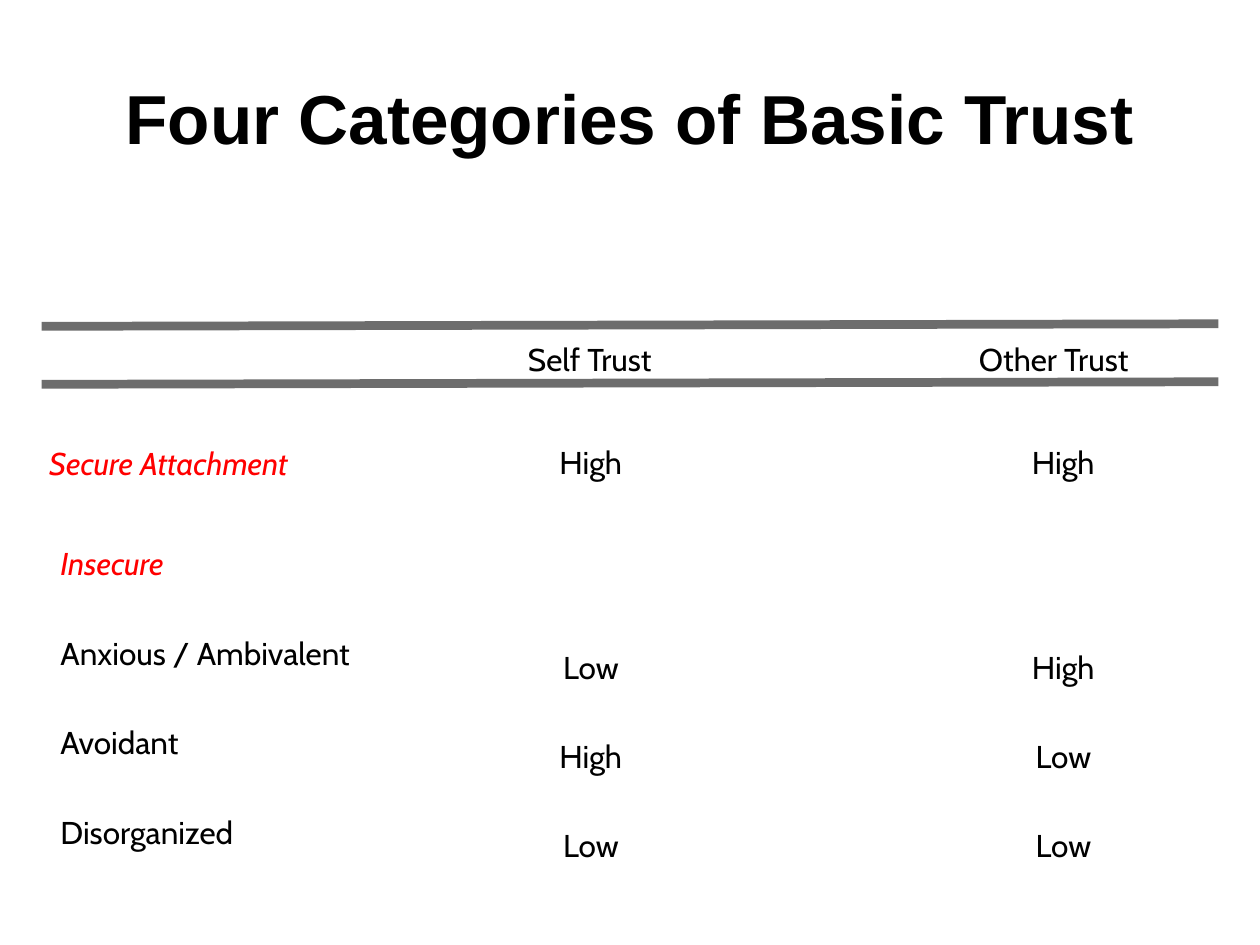
import pptx
import pptx.util
import pptx.dml.color
import pptx.enum.shapes
import pptx.enum.text
import lxml.etree

Inch = pptx.util.Inches
Mid = pptx.enum.text.MSO_ANCHOR.MIDDLE
Align = pptx.enum.text.PP_ALIGN
HUES = {"ink": "000000", "key": "FF0000", "rule": "6D6D6D"}

deck = pptx.Presentation()
deck.slide_width, deck.slide_height = Inch(10), Inch(7.5)
slide = deck.slides.add_slide(deck.slide_layouts[6])


def hue(name):
    return pptx.dml.color.RGBColor.from_string(HUES[name])


def write(words, left, mid, wide, high, wrap=True, ink="ink",
          align=Align.LEFT, **style):
    """Add a text box whose middle height is mid."""
    box = slide.shapes.add_textbox(
        Inch(left), Inch(mid - high / 2), Inch(wide), Inch(high))
    frame = box.text_frame
    form = {"margin_left": 0, "margin_right": 0, "margin_top": 0,
            "margin_bottom": 0, "vertical_anchor": Mid, "word_wrap": wrap}
    for key, value in form.items():
        setattr(frame, key, value)
    para = frame.paragraphs[0]
    para.alignment = align
    run = para.add_run()
    run.text = words
    look = {"name": "Cabin", "size": pptx.util.Pt(18), **style}
    for key, value in look.items():
        setattr(run.font, key, value)
    run.font.color.rgb = hue(ink)


# Title
write("Four Categories of Basic Trust", 0.5, 0.93, 9, 1.25, align=Align.CENTER,
      name="Arial", size=pptx.util.Pt(39.6), bold=True)

# Rules above and below the column heads
for top in (2.59, 3.05):
    rule = slide.shapes.add_connector(
        pptx.enum.shapes.MSO_CONNECTOR.STRAIGHT,
        Inch(0.33), Inch(top), Inch(9.67), Inch(top - 0.02))
    rule.line.color.rgb = hue("rule")
    rule.line.width = pptx.util.Pt(5)
    lxml.etree.SubElement(
        rule._element.spPr, pptx.oxml.ns.qn("a:effectLst"))

# Column heads
for head, left, wide in (("Self Trust", 4.19, 1.07), ("Other Trust", 7.77, 1.26)):
    write(head, left, 2.85, wide, 0.3, wrap=False)

# Row labels
step = 0.71
write("Secure Attachment", 0.39, 3.67, 2.35, 0.41, ink="key", italic=True)
for row, label in enumerate(
        ("Insecure", "Anxious / Ambivalent", "Avoidant", "Disorganized")):
    style = {} if row else {"ink": "key", "italic": True}
    write(label, 0.48, 4.47 + row * step, 2.63, 0.42, **style)

# Trust levels, centred on their columns
wides = {"High": 0.52, "Low": 0.46}
rows = [(3.67, "High", "High")]
kinds = (("Low", "High"), ("High", "Low"), ("Low", "Low"))
rows += [(5.29 + row * step, *pair) for row, pair in enumerate(kinds)]
for mid, *levels in rows:
    for col, level in enumerate(levels):
        wide = wides[level]
        write(level, 4.7 + 3.75 * col - wide / 2, mid, wide, 0.3, wrap=False)

deck.save("out.pptx")
